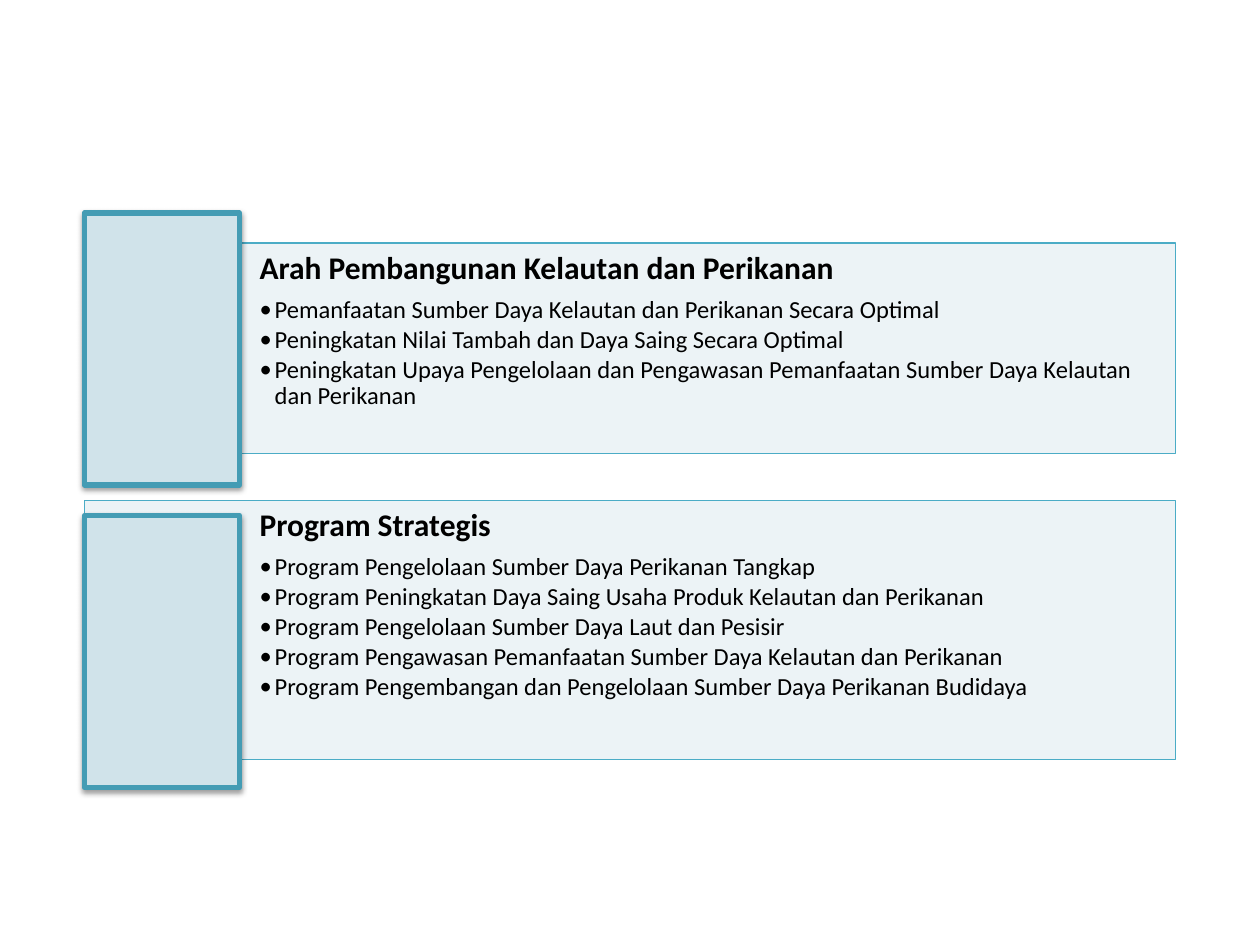
from lxml import etree
from pptx import Presentation
from pptx import util as u
from pptx.dml.color import RGBColor
from pptx.enum import shapes, text
from pptx.oxml.ns import qn

COLORS = {
    "pale": "D0E3EA",
    "panel_line": "4BACC6",
    "tile_line": "449CB4",
    "text": "000000",
}
FONT = "Calibri"
LEFT, PANEL_WIDTH = 0.67, 8.66
TILE_WIDTH, TILE_HEIGHT = 1.23, 2.16

SECTIONS = [
    {
        "panel_top": 1.93,
        "panel_height": 1.67,
        "tile_top": 1.69,
        "title": "Arah Pembangunan Kelautan dan Perikanan",
        "items": [
            "Pemanfaatan Sumber Daya Kelautan dan Perikanan Secara Optimal",
            "Peningkatan Nilai Tambah dan Daya Saing Secara Optimal",
            "Peningkatan Upaya Pengelolaan dan Pengawasan Pemanfaatan "
            "Sumber Daya Kelautan dan Perikanan",
        ],
    },
    {
        "panel_top": 3.97,
        "panel_height": 2.06,
        "tile_top": 4.09,
        "title": "Program Strategis",
        "items": [
            "Program Pengelolaan Sumber Daya Perikanan Tangkap",
            "Program Peningkatan Daya Saing Usaha Produk Kelautan dan Perikanan",
            "Program Pengelolaan Sumber Daya Laut dan Pesisir",
            "Program Pengawasan Pemanfaatan Sumber Daya Kelautan dan Perikanan",
            "Program Pengembangan dan Pengelolaan Sumber Daya Perikanan Budidaya",
        ],
    },
]


def color(name):
    return RGBColor.from_string(COLORS[name])


def add_element(parent, tag, **attributes):
    return etree.SubElement(parent, qn(tag), attributes)


def add_rectangle(slide, box, line_color, line_width):
    shape = slide.shapes.add_shape(
        shapes.MSO_SHAPE.RECTANGLE, *(u.Inches(length) for length in box)
    )
    shape.shadow.inherit = False
    shape.fill.solid()
    shape.fill.fore_color.rgb = color("pale")
    shape.line.color.rgb = color(line_color)
    shape.line.width = u.Pt(line_width)
    return shape


def format_paragraph(paragraph, size, bold, space_share):
    paragraph.alignment = text.PP_ALIGN.LEFT
    paragraph.line_spacing = 0.9
    paragraph.space_after = u.Pt(size * space_share)
    for run in paragraph.runs:
        run.font.name = FONT
        run.font.size = u.Pt(size)
        run.font.bold = bold
        run.font.color.rgb = color("text")


def add_bullet(paragraph):
    paragraph.level = 1
    properties = paragraph._p.get_or_add_pPr()
    properties.set("marL", str(u.Inches(0.12)))
    properties.set("indent", str(u.Inches(-0.12)))
    add_element(properties, "a:buFont", typeface=FONT)
    add_element(properties, "a:buChar", char="•")


def add_panel(slide, box, title, items):
    shape = add_rectangle(slide, box, "panel_line", 0.75)
    fill_color = shape._element.spPr.find(qn("a:solidFill"))[0]
    add_element(fill_color, "a:alpha", val="40000")

    frame = shape.text_frame
    frame.word_wrap = True
    frame.vertical_anchor = text.MSO_ANCHOR.TOP
    frame.margin_left = u.Inches(1.39)
    frame.margin_top = frame.margin_right = frame.margin_bottom = u.Inches(0.07)
    frame.text = "\n".join([title, *items])
    heading, *bullets = frame.paragraphs
    format_paragraph(heading, 18, True, 0.35)
    for paragraph in bullets:
        format_paragraph(paragraph, 14, False, 0.15)
        add_bullet(paragraph)


def add_tile(slide, box):
    shape = add_rectangle(slide, box, "tile_line", 3)
    effects = shape._element.spPr.find(qn("a:effectLst"))
    shadow = add_element(
        effects, "a:outerShdw", blurRad=str(u.Pt(3.1)), dist=str(u.Pt(1.6)),
        dir="5400000", rotWithShape="0",
    )
    shadow_color = add_element(shadow, "a:srgbClr", val=COLORS["text"])
    add_element(shadow_color, "a:alpha", val="38000")


def main():
    presentation = Presentation()
    presentation.slide_width = u.Inches(10)
    presentation.slide_height = u.Inches(7.5)
    slide = presentation.slides.add_slide(presentation.slide_layouts[6])
    for section in SECTIONS:
        panel_box = (LEFT, section["panel_top"], PANEL_WIDTH, section["panel_height"])
        add_panel(slide, panel_box, section["title"], section["items"])
        add_tile(slide, (LEFT, section["tile_top"], TILE_WIDTH, TILE_HEIGHT))
    presentation.save("out.pptx")


if __name__ == "__main__":
    main()
